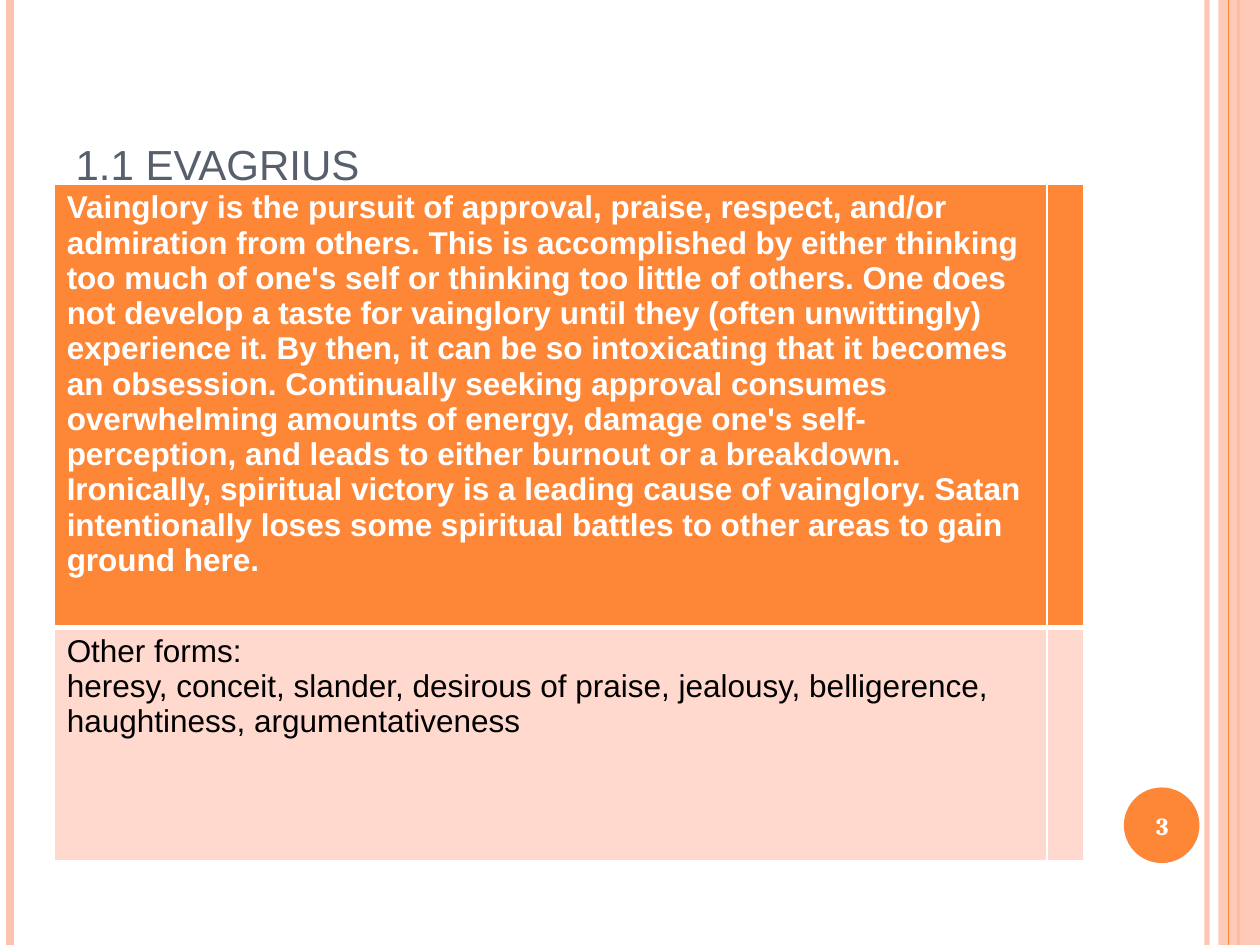
"""Build the Evagrius slide: a vainglory table framed by vertical stripes."""
from dataclasses import dataclass

from lxml import etree
from pptx import Presentation
from pptx import util as u
from pptx.dml.color import RGBColor
from pptx.enum import shapes, text
from pptx.oxml.ns import qn


@dataclass(frozen=True)
class Theme:
    orange: str = "FE8637"
    peach: str = "FEC3AE"
    blush: str = "FFD9CE"
    slate: str = "575F6D"
    white: str = "FFFFFF"
    black: str = "000000"
    body_font: str = "Arial"
    number_font: str = "Cambria"
    title_size: int = 24
    body_size: int = 18
    number_size: int = 14


THEME = Theme()
WIDTH, HEIGHT = 10, 7.5

TITLE = "1.1 EVAGRIUS"
PAGE_NUMBER = "3"
VAINGLORY = (
    "Vainglory is the pursuit of approval, praise, respect, and/or admiration from others. "
    "This is accomplished by either thinking too much of one's self or thinking too little of others. "
    "One does not develop a taste for vainglory until they (often unwittingly) experience it. "
    "By then, it can be so intoxicating that it becomes an obsession. "
    "Continually seeking approval consumes overwhelming amounts of energy, damage one's "
    "self-perception, and leads to either burnout or a breakdown. "
    "Ironically, spiritual victory is a leading cause of vainglory. "
    "Satan intentionally loses some spiritual battles to other areas to gain ground here."
)
OTHER_FORMS = (
    "Other forms:\vheresy, conceit, slander, desirous of praise, jealousy, belligerence, "
    "haughtiness, argumentativeness"
)
ROWS = [
    dict(cells=(VAINGLORY, ""), height=3.52, fill=THEME.orange, ink=THEME.white, bold=True,
         borders=dict(lnL=1, lnR=1, lnT=1, lnB=3)),
    dict(cells=(OTHER_FORMS, ""), height=1.85, fill=THEME.blush, ink=THEME.black, bold=False,
         borders=dict(lnL=1, lnR=1, lnT=3, lnB=1)),
]
COLUMNS = (7.88, 0.29)
STRIPES_BEHIND = [(9.58, THEME.peach, 3, 93), (0.08, THEME.peach, 4.5, 100), (9.83, THEME.orange, 1.5, 100)]
STRIPES_FRONT = [(9.75, THEME.orange, 0.75, 100)]


def inches(*lengths):
    return [u.Inches(length) for length in lengths]


def set_opacity(owner, percent):
    color = next(owner.iter(qn("a:srgbClr")))
    etree.SubElement(color, qn("a:alpha")).set("val", str(percent * 1000))


def set_font(paragraph, name, size, color, bold=False):
    font = paragraph.font
    font.name, font.size, font.bold = name, u.Pt(size), bold
    font.color.rgb = RGBColor.from_string(color)


def add_stripe(slide, x, color, width, opacity):
    stripe = slide.shapes.add_connector(shapes.MSO_CONNECTOR.STRAIGHT, *inches(x, 0, x, HEIGHT))
    stripe.line.color.rgb = RGBColor.from_string(color)
    stripe.line.width = u.Pt(width)
    properties = stripe._element.spPr
    if opacity < 100:
        set_opacity(properties, opacity)
    etree.SubElement(properties, qn("a:effectLst"))


def add_solid(slide, preset, box, color):
    solid = slide.shapes.add_shape(preset, *inches(*box))
    solid.shadow.inherit = False
    solid.fill.solid()
    solid.fill.fore_color.rgb = RGBColor.from_string(color)
    solid.line.fill.background()
    return solid


def add_frame(slide):
    for stripe in STRIPES_BEHIND:
        add_stripe(slide, *stripe)
    band = add_solid(slide, shapes.MSO_SHAPE.RECTANGLE, (9.67, 0, 0.33, HEIGHT), THEME.peach)
    set_opacity(band._element.spPr, 87)
    for stripe in STRIPES_FRONT:
        add_stripe(slide, *stripe)


def add_page_number(slide):
    add_solid(slide, shapes.MSO_SHAPE.OVAL, (8.92, 6.25, 0.6, 0.6), THEME.orange)
    number = slide.shapes.add_textbox(*inches(8.89, 6.27, 0.67, 0.57)).text_frame
    number.word_wrap = True
    number.vertical_anchor = text.MSO_ANCHOR.MIDDLE
    number.text = PAGE_NUMBER
    number.paragraphs[0].alignment = text.PP_ALIGN.CENTER
    set_font(number.paragraphs[0], THEME.number_font, THEME.number_size, THEME.white, True)


def format_title(slide):
    title = slide.shapes.title
    title.left, title.top, title.width, title.height = inches(0.5, 0.3, 8.17, 1.25)
    frame = title.text_frame
    frame.text = TITLE
    frame.vertical_anchor = text.MSO_ANCHOR.BOTTOM
    frame.paragraphs[0].alignment = text.PP_ALIGN.LEFT
    set_font(frame.paragraphs[0], THEME.body_font, THEME.title_size, THEME.slate)


def set_borders(cell, borders):
    properties = cell._tc.get_or_add_tcPr()
    for position, (side, width) in enumerate(borders.items()):
        border = etree.Element(qn(f"a:{side}"), w=str(u.Pt(width)))
        fill = etree.SubElement(border, qn("a:solidFill"))
        etree.SubElement(fill, qn("a:srgbClr")).set("val", THEME.white)
        properties.insert(position, border)


def add_vainglory_table(slide):
    size = sum(COLUMNS), sum(row["height"] for row in ROWS)
    table = slide.shapes.add_table(len(ROWS), len(COLUMNS), *inches(0.43, 1.46, *size)).table
    for column, width in zip(table.columns, COLUMNS):
        column.width = u.Inches(width)
    for table_row, row in zip(table.rows, ROWS):
        table_row.height = u.Inches(row["height"])
        for cell, wording in zip(table_row.cells, row["cells"]):
            cell.text = wording
            cell.fill.solid()
            cell.fill.fore_color.rgb = RGBColor.from_string(row["fill"])
            set_borders(cell, row["borders"])
            set_font(cell.text_frame.paragraphs[0], THEME.body_font, THEME.body_size, row["ink"], row["bold"])


def main():
    deck = Presentation()
    deck.slide_width, deck.slide_height = inches(WIDTH, HEIGHT)
    slide = deck.slides.add_slide(deck.slide_layouts[5])
    add_frame(slide)
    add_page_number(slide)
    format_title(slide)
    add_vainglory_table(slide)
    deck.save("out.pptx")


if __name__ == "__main__":
    main()
